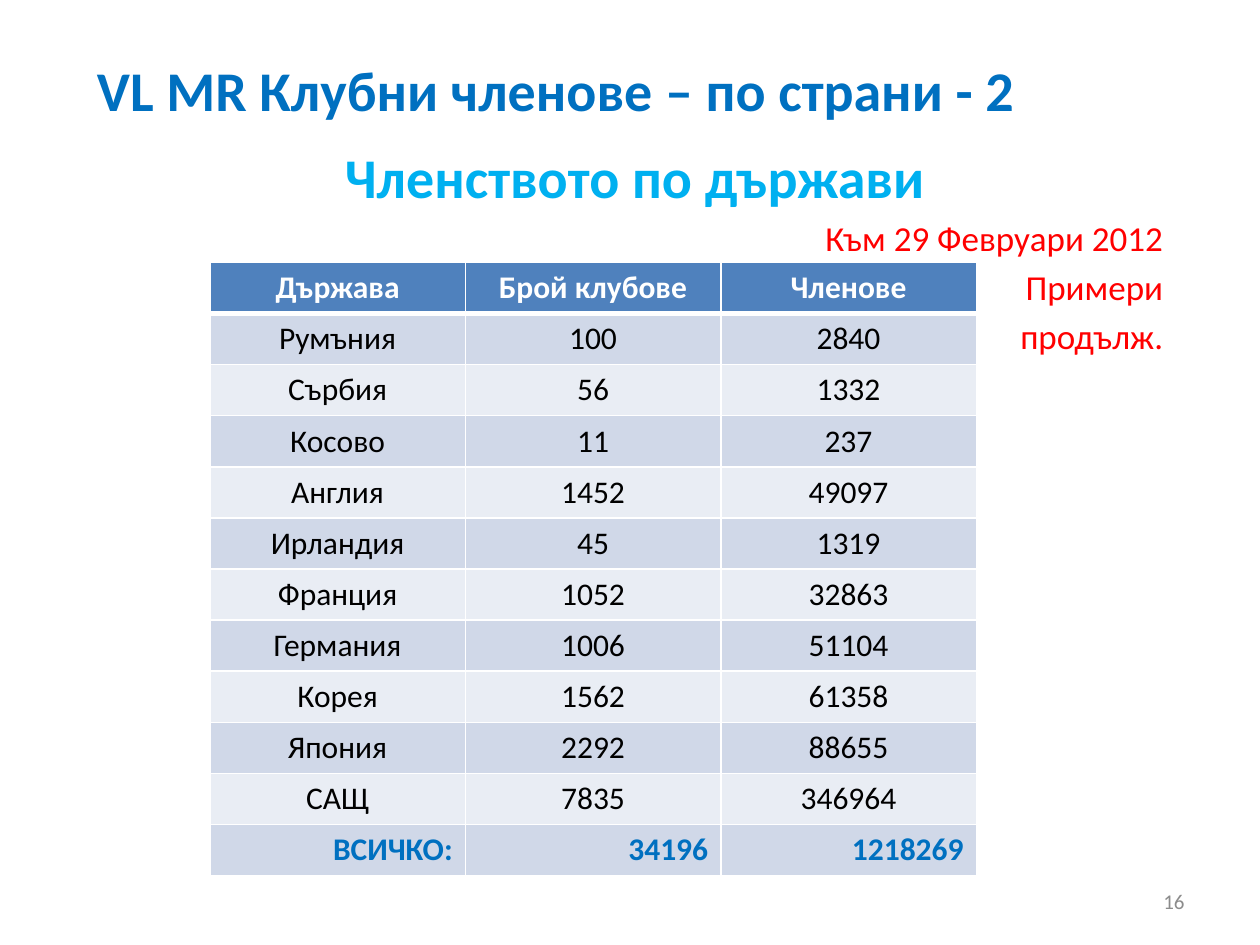
from lxml import etree
from pptx import Presentation
from pptx.dml.color import RGBColor
from pptx.enum.text import MSO_ANCHOR, PP_ALIGN
from pptx.oxml.ns import qn
from pptx.util import Cm, Pt

LEFT, CENTER, RIGHT = PP_ALIGN.LEFT, PP_ALIGN.CENTER, PP_ALIGN.RIGHT
MIDDLE = MSO_ANCHOR.MIDDLE
TITLE_ONLY = 5
FONT = "Calibri"

COLORS = {
    "title": "0070C0", "subtitle": "00B0F0", "note": "FF0000",
    "number": "8C8C8C", "header": "4F81BD", "odd": "D0D8E8",
    "even": "E9EDF4", "white": "FFFFFF", "black": "000000",
}

TITLE = "VL MR Клубни членове – по страни - 2"
SUBTITLE = "Членството по държави"
NOTES = ["Към 29 Февруари 2012", "Примери", "продълж."]
SLIDE_NUMBER = "16"

HEADER = ("Държава", "Брой клубове", "Членове")
COUNTRIES = [
    ("Румъния", 100, 2840),
    ("Сърбия", 56, 1332),
    ("Косово", 11, 237),
    ("Англия", 1452, 49097),
    ("Ирландия", 45, 1319),
    ("Франция", 1052, 32863),
    ("Германия", 1006, 51104),
    ("Корея", 1562, 61358),
    ("Япония", 2292, 88655),
    ("САЩ", 7835, 346964),
]
TOTAL = ("ВСИЧКО:", 34196, 1218269)

COLUMN_WIDTH = Cm(5.15)
ROW_HEIGHT = Cm(1.03)


def write(paragraph, text, size, color, bold=False, align=LEFT, before=0):
    paragraph.text = str(text)
    paragraph.alignment = align
    paragraph.space_before = Pt(before)
    font = paragraph.font
    font.name, font.size, font.bold = FONT, Pt(size), bold
    font.color.rgb = RGBColor.from_string(COLORS[color])


def add_text_box(slide, left, top, width, height):
    frame = slide.shapes.add_textbox(Cm(left), Cm(top), Cm(width), Cm(height)).text_frame
    frame.word_wrap = True
    return frame


def set_borders(cell, bottom_width):
    """White lines of 1 pt on three sides, placed before the cell's fill."""
    properties = cell._tc.get_or_add_tcPr()
    sides = {"lnL": 1, "lnR": 1, "lnT": 1, "lnB": bottom_width}
    for index, (side, width) in enumerate(sides.items()):
        line = etree.Element(qn(f"a:{side}"), w=str(Pt(width)))
        fill = etree.SubElement(line, qn("a:solidFill"))
        etree.SubElement(fill, qn("a:srgbClr"), val=COLORS["white"])
        properties.insert(index, line)


def add_membership_table(slide):
    rows = [HEADER, *COUNTRIES, TOTAL]
    last = len(rows) - 1
    table = slide.shapes.add_table(
        len(rows), len(HEADER), Cm(4.23), Cm(5.29),
        COLUMN_WIDTH * len(HEADER), ROW_HEIGHT * len(rows),
    ).table
    for column in table.columns:
        column.width = COLUMN_WIDTH
    for row_index, values in enumerate(rows):
        table.rows[row_index].height = ROW_HEIGHT
        if row_index == 0:
            fill, color, bold, align = "header", "white", True, CENTER
        else:
            fill = "odd" if row_index % 2 else "even"
            is_total = row_index == last
            color = "title" if is_total else "black"
            bold, align = is_total, RIGHT if is_total else CENTER
        for column_index, value in enumerate(values):
            cell = table.cell(row_index, column_index)
            cell.fill.solid()
            cell.fill.fore_color.rgb = RGBColor.from_string(COLORS[fill])
            write(cell.text_frame.paragraphs[0], value, 18, color, bold, align)
            set_borders(cell, 3 if row_index == 0 else 1)


def main():
    presentation = Presentation()
    presentation.slide_width, presentation.slide_height = Cm(25.4), Cm(19.05)
    slide = presentation.slides.add_slide(presentation.slide_layouts[TITLE_ONLY])

    title = slide.shapes.title
    title.left, title.top, title.width, title.height = Cm(1.7), Cm(0.84), Cm(22.66), Cm(1.9)
    title.text_frame.vertical_anchor = MIDDLE
    write(title.text_frame.paragraphs[0], TITLE, 32, "title", True)

    subtitle = add_text_box(slide, 1.9, 2.74, 21.8, 14.8)
    write(subtitle.paragraphs[0], SUBTITLE, 32, "subtitle", True, CENTER, before=6.4)
    for note in NOTES:
        write(subtitle.add_paragraph(), note, 20, "note", align=RIGHT, before=4)

    number = add_text_box(slide, 18.2, 17.65, 5.93, 1.02)
    number.vertical_anchor = MIDDLE
    write(number.paragraphs[0], SLIDE_NUMBER, 12, "number", align=RIGHT)

    add_membership_table(slide)
    presentation.save("out.pptx")


if __name__ == "__main__":
    main()
